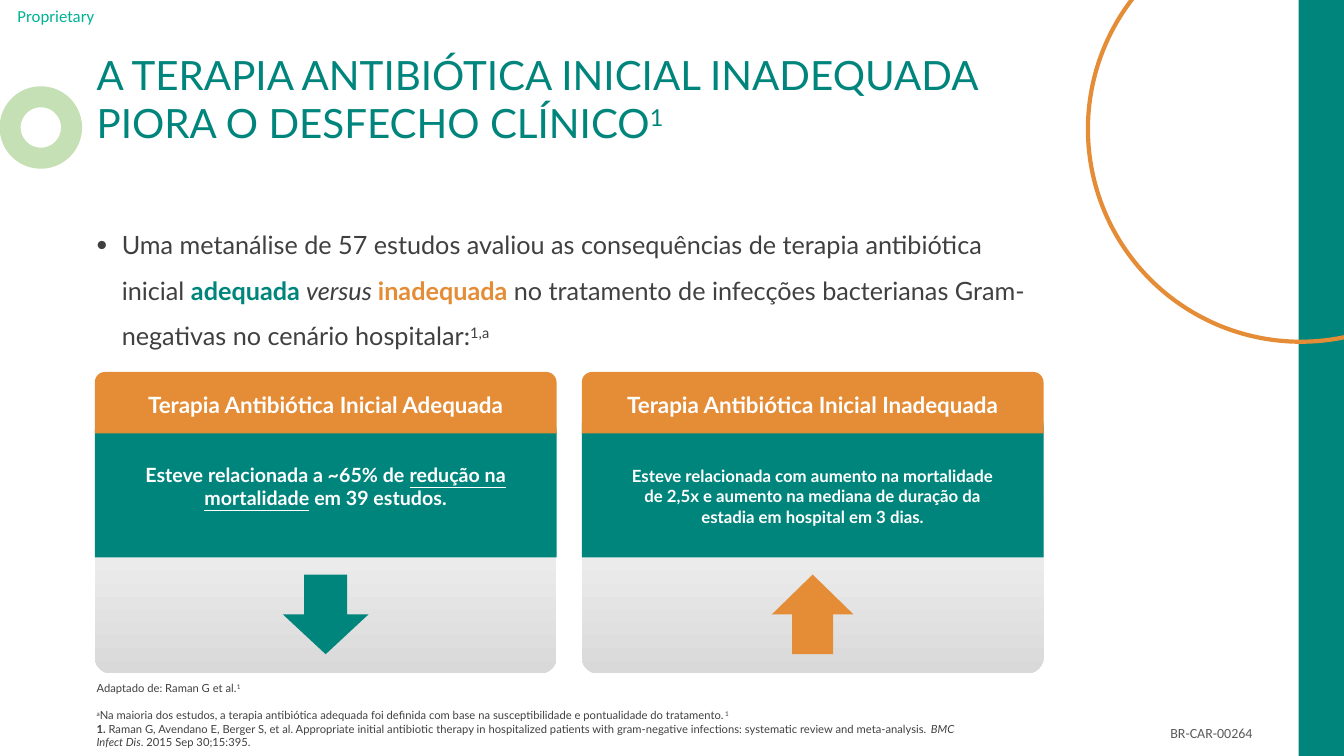
from lxml import etree
from pptx import Presentation
from pptx import util as u
from pptx.dml.color import RGBColor
from pptx.enum import shapes, text
from pptx.oxml import ns

COLORS = {"teal": "00857C", "orange": "E48C36", "mint": "00B294", "leaf": "C5E0B4",
          "ink": "404040", "gray": "5B5B5B", "white": "FFFFFF"}
PANEL_STOPS = {0: "FFFFFF", 49: "F2F2F2", 100: "D9D9D9"}
WIDTH, HEIGHT = 13.33, 7.5
KINDS = shapes.MSO_SHAPE
MIDDLE = text.MSO_ANCHOR.MIDDLE
CENTER = text.PP_ALIGN.CENTER

deck = Presentation()
deck.slide_width, deck.slide_height = u.Inches(WIDTH), u.Inches(HEIGHT)
page = deck.slides.add_slide(deck.slide_layouts[6])


def draw(kind, left, top, width, height, fill=None, line=None, weight=1):
    """Add a preset shape, or a text box when kind is None."""
    place = [u.Inches(value) for value in (left, top, width, height)]
    if kind is None:
        return page.shapes.add_textbox(*place)
    shape = page.shapes.add_shape(kind, *place)
    shape.shadow.inherit = False
    if fill:
        shape.fill.solid()
        shape.fill.fore_color.rgb = RGBColor.from_string(COLORS[fill])
    else:
        shape.fill.background()
    if line:
        shape.line.color.rgb = RGBColor.from_string(COLORS[line])
        shape.line.width = u.Pt(weight)
    else:
        shape.line.fill.background()
    return shape


def write(shape, paragraphs, size, color, font="Lato", bold=False, align=None,
          anchor=text.MSO_ANCHOR.TOP, top=0.05, bullet=False, spacing=None):
    """Fill a shape with paragraphs, each a list of (words, format changes)."""
    frame = shape.text_frame
    frame.word_wrap = True
    frame.vertical_anchor = anchor
    frame.margin_top = u.Inches(top)
    for index, spans in enumerate(paragraphs):
        para = frame.add_paragraph() if index else frame.paragraphs[0]
        para.alignment = align or text.PP_ALIGN.LEFT
        if spacing:
            para.line_spacing = spacing
        if bullet:
            props = para._p.get_or_add_pPr()
            props.set("marL", str(u.Inches(0.25)))
            props.set("indent", str(-u.Inches(0.25)))
            etree.SubElement(props, ns.qn("a:buSzPct")).set("val", "120000")
            etree.SubElement(props, ns.qn("a:buFont")).set("typeface", "Arial")
            etree.SubElement(props, ns.qn("a:buChar")).set("char", "•")
        for words, changes in spans:
            span = para.add_run()
            span.text = words
            span.font.name, span.font.size = font, u.Pt(size)
            span.font.bold = changes.get("bold", bold)
            span.font.italic = changes.get("italic", False)
            span.font.underline = changes.get("underline", False)
            span.font.color.rgb = RGBColor.from_string(COLORS[changes.get("color", color)])
            if changes.get("raised"):
                span._r.get_or_add_rPr().set("baseline", "30000")


RAISED = {"raised": True}
MARGIN = 0.86

# Frame of the page
tag = draw(None, 0, 0, 1.11, 0.32)
tag.text_frame.margin_left = tag.text_frame.margin_right = tag.text_frame.margin_bottom = 0
write(tag, [[("Proprietary", {})]], 12, "mint", font="Calibri",
      align=CENTER, anchor=MIDDLE, top=0)
draw(KINDS.RECTANGLE, WIDTH - 0.45, 0, 0.45, HEIGHT, fill="teal")
draw(KINDS.OVAL, 0.1, 0.96, 0.61, 0.61, line="leaf", weight=15)
write(draw(None, 11.51, 7.14, 1.2, 0.27), [[("BR-CAR-00264", {})]], 10, "gray", font="Calibri")
draw(KINDS.OVAL, 10.79, -0.83, 4.22, 4.22, line="orange", weight=3)

# Title and introduction
write(draw(None, MARGIN, 0.67, 9.39, 0.61),
      [[("A TERAPIA ANTIBIÓTICA INICIAL INADEQUADA PIORA O DESFECHO CLÍNICO", {}),
        ("1", RAISED)]], 28.8, "teal", anchor=MIDDLE)
write(draw(None, MARGIN, 2.08, 9.6, 1.67),
      [[("Uma metanálise de 57 estudos avaliou as consequências de terapia antibiótica inicial ", {}),
        ("adequada ", {"color": "teal", "bold": True}),
        ("versus ", {"italic": True}),
        ("inadequada", {"color": "orange", "bold": True}),
        (" no tratamento de infecções bacterianas Gram-negativas no cenário hospitalar:", {}),
        ("1,a", RAISED)]], 18, "ink", bullet=True, spacing=1.5)

# Two cards: panel, arrow, finding, heading
CARD_LEFT, CARD_STEP, CARD_WIDTH = 0.94, 4.83, 4.58
CARD_TOP, CARD_HEIGHT, BAND_BOTTOM = 3.69, 2.99, 5.53
cards = [
    {"heading": "Terapia Antibiótica Inicial Adequada",
     "finding": [[("Esteve relacionada a ~65% de ", {}),
                  ("redução na mortalidade", {"underline": True}),
                  (" em 39 estudos.", {})]],
     "size": 14, "inset": 0.05, "band_top": 4.04,
     "arrow": KINDS.DOWN_ARROW, "arrow_width": 0.85, "arrow_color": "teal"},
    {"heading": "Terapia Antibiótica Inicial Inadequada",
     "finding": [[("Esteve relacionada com aumento na mortalidade", {})],
                 [("de 2,5x e aumento na mediana de duração da", {})],
                 [("estadia em hospital em 3 dias.", {})]],
     "size": 12, "inset": 0.32, "band_top": 3.97,
     "arrow": KINDS.UP_ARROW, "arrow_width": 0.81, "arrow_color": "orange"},
]
for column, card in enumerate(cards):
    left = CARD_LEFT + column * CARD_STEP
    panel = draw(KINDS.ROUNDED_RECTANGLE, left, CARD_TOP, CARD_WIDTH, CARD_HEIGHT)
    panel.adjustments[0] = 0.054
    panel.fill.gradient()
    panel.fill.gradient_angle = 270
    stops = panel._element.spPr.find(".//" + ns.qn("a:gsLst"))
    for stop in list(stops):
        stops.remove(stop)
    for position, color in PANEL_STOPS.items():
        stop = etree.SubElement(stops, ns.qn("a:gs"), pos=str(position * 1000))
        etree.SubElement(stop, ns.qn("a:srgbClr"), val=color)

    arrow_left = left + (CARD_WIDTH - card["arrow_width"]) / 2
    draw(card["arrow"], arrow_left, 5.7, card["arrow_width"], 0.79, fill=card["arrow_color"])
    band = draw(KINDS.ROUND_2_SAME_RECTANGLE, left, card["band_top"], CARD_WIDTH,
                BAND_BOTTOM - card["band_top"], fill="teal")
    write(band, card["finding"], card["size"], "white", bold=True,
          align=CENTER, anchor=MIDDLE, top=card["inset"])
    header = draw(KINDS.ROUND_2_SAME_RECTANGLE, left, CARD_TOP, CARD_WIDTH, 0.61, fill="orange")
    write(header, [[(card["heading"], {})]], 16, "white", bold=True, align=CENTER, anchor=MIDDLE)

# Source and footnotes
write(draw(None, MARGIN, 6.71, 2.21, 0.24),
      [[("Adaptado de: Raman G et al.", {}), ("1", RAISED)]], 8, "ink")
write(draw(None, MARGIN, 6.98, 8.84, 0.5),
      [[("a", RAISED),
        ("Na maioria dos estudos, a terapia antibiótica adequada foi definida com base na "
         "susceptibilidade e pontualidade do tratamento.", {}),
        ("1", RAISED)],
       [("1. ", {"bold": True}),
        ("Raman G, Avendano E, Berger S, et al. Appropriate initial antibiotic therapy in "
         "hospitalized patients with gram-negative infections: systematic review and "
         "meta-analysis.", {}),
        (" BMC Infect Dis", {"italic": True}),
        (". 2015 Sep 30;15:395.", {})]], 8, "ink")

deck.save("out.pptx")
